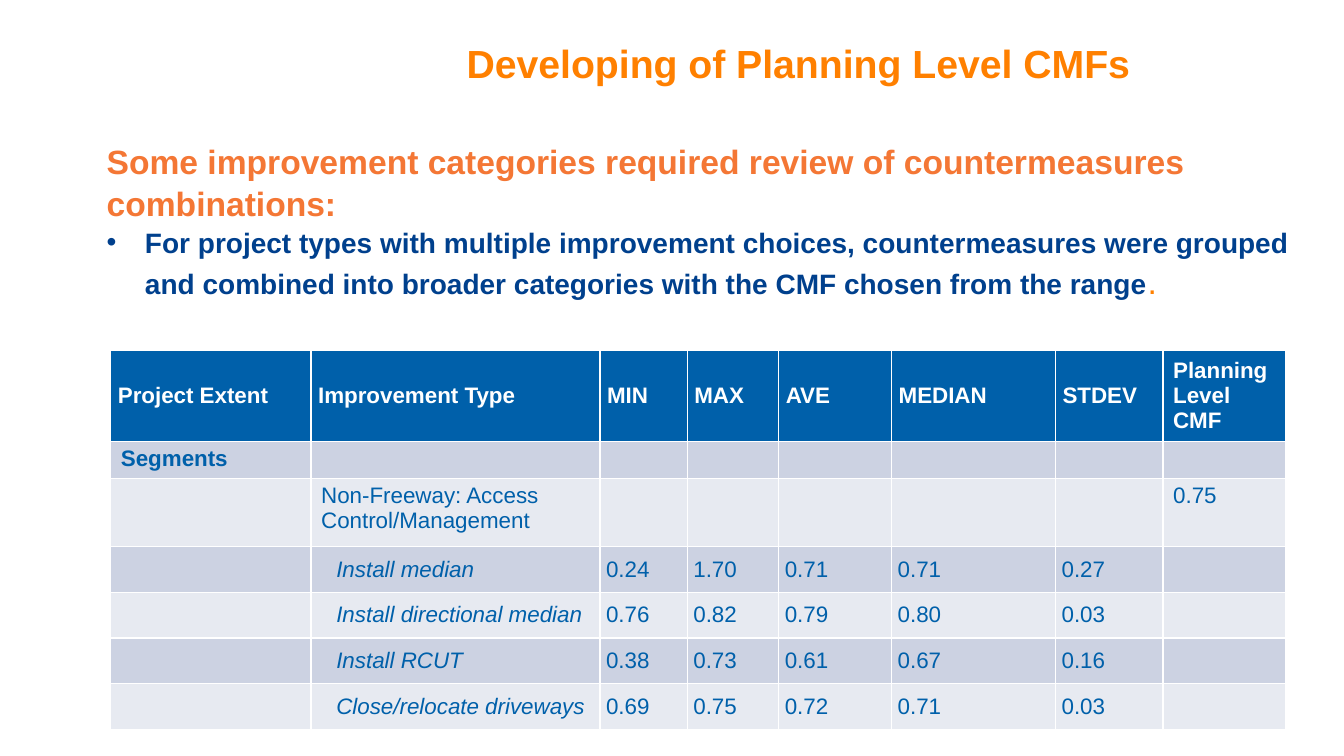
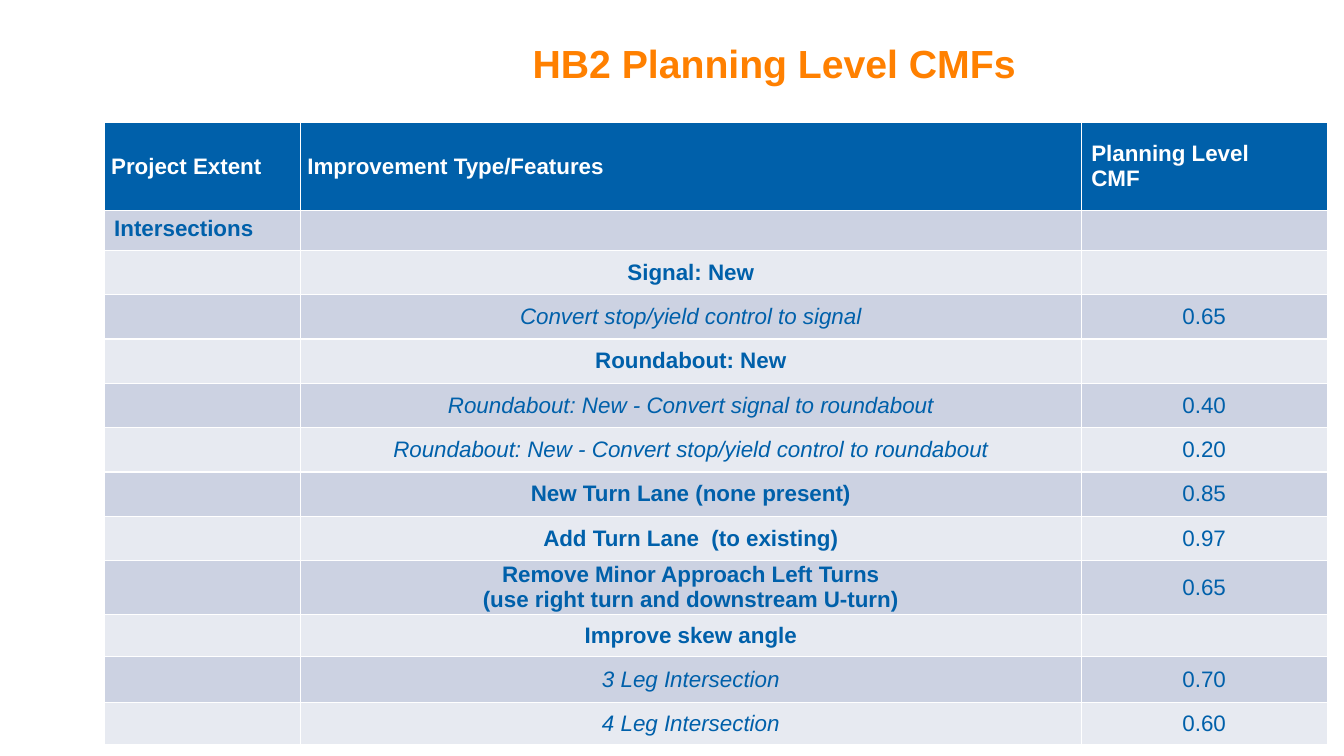
from lxml.etree import SubElement
from pptx import Presentation
from pptx.dml.color import RGBColor
from pptx.enum.text import MSO_ANCHOR, PP_ALIGN
from pptx.oxml.ns import qn
from pptx.util import Inches, Pt

WHITE = RGBColor(0xFF, 0xFF, 0xFF)
ORANGE = RGBColor(0xFF, 0x80, 0x00)
CORAL = RGBColor(0xF4, 0x77, 0x35)
NAVY = RGBColor(0x00, 0x40, 0x8D)
BLUE = RGBColor(0x00, 0x60, 0xAA)
DARK = RGBColor(0xCC, 0xD2, 0xE2)
LIGHT = RGBColor(0xE7, 0xEA, 0xF1)

deck = Presentation()
deck.slide_width, deck.slide_height = Inches(13.33), Inches(7.5)
# One percent of the slide's width and height
COL, ROW = deck.slide_width // 100, deck.slide_height // 100

# Cell styles: "pad" keeps the default margins, "left" is an indent in inches
HEAD = dict(bold=True, color=WHITE, left=0.07)
LAST = dict(bold=True, color=WHITE, pad=True)
AREA = dict(bold=True, pad=True, anchor=MSO_ANCHOR.TOP)
TYPE = dict(pad=True, anchor=MSO_ANCHOR.TOP)
ITEM = dict(italic=True, left=0.25)
NUM = dict(left=0.06)
GROUP = dict(bold=True, align=PP_ALIGN.CENTER)
CASE = dict(italic=True, align=PP_ALIGN.CENTER)
RATE = dict(align=PP_ALIGN.CENTER)


def put(para, text, size=16, color=BLUE, bold=False, italic=False, align=None):
    """Add a formatted run to a paragraph."""
    if align is not None:
        para.alignment = align
    run = para.add_run()
    run.text = text
    font = run.font
    font.name, font.size, font.color.rgb = "Arial", Pt(size), color
    font.bold, font.italic = bold, italic


def grid(slide, left, top, cols, rows):
    """Draw a table; each row is (height, {column: (text, style)})."""
    high = sum(row[0] for row in rows)
    table = slide.shapes.add_table(
        len(rows), len(cols), int(left * COL), int(top * ROW),
        int(sum(cols) * COL), int(high * ROW)).table
    for col, wide in zip(table.columns, cols):
        col.width = int(wide * COL)
    for r, (tall, texts) in enumerate(rows):
        table.rows[r].height = int(tall * ROW)
        for c, cell in enumerate(table.rows[r].cells):
            cell.fill.solid()
            cell.fill.fore_color.rgb = BLUE if r == 0 else (LIGHT, DARK)[r % 2]
            text, style = texts.get(c, ("", {}))
            look = dict(style)
            cell.vertical_anchor = look.pop("anchor", MSO_ANCHOR.MIDDLE)
            indent = look.pop("left", 0)
            if not look.pop("pad", False):
                cell.margin_left = Inches(indent)
                cell.margin_right = cell.margin_top = cell.margin_bottom = 0
            frame = cell.text_frame
            for n, line in enumerate(text.split("\n") if text else []):
                para = frame.add_paragraph() if n else frame.paragraphs[0]
                put(para, line, **look)


slides = []
for name, left in (("Developing of Planning Level CMFs", 22.7),
                   ("HB2 Planning Level CMFs", 20.9)):
    slide = deck.slides.add_slide(deck.slide_layouts[6])
    frame = slide.shapes.add_textbox(
        int(left * COL), 0, int(73.4 * COL), int(16.7 * ROW)).text_frame
    frame.word_wrap = True
    frame.vertical_anchor = MSO_ANCHOR.MIDDLE
    put(frame.paragraphs[0], name, size=28, color=ORANGE, bold=True,
        align=PP_ALIGN.CENTER)
    slides.append(slide)
ranges, levels = slides

# Slide 1: introduction
frame = ranges.shapes.add_textbox(
    int(7.2 * COL), int(17.7 * ROW), int(90.2 * COL), 25 * ROW).text_frame
frame.word_wrap = True
intro, point = frame.paragraphs[0], frame.add_paragraph()
intro.line_spacing = point.line_spacing = 1.05
put(intro, "Some improvement categories required review of countermeasures "
    "combinations:", size=24, color=CORAL, bold=True)
props = point._p.get_or_add_pPr()
props.set("marL", str(Inches(0.38)))
props.set("indent", str(-Inches(0.38)))
SubElement(props, qn("a:buFont")).set("typeface", "Arial")
SubElement(props, qn("a:buChar")).set("char", "•")
put(point, "For project types with multiple improvement choices, "
    "countermeasures were grouped and combined into broader categories with "
    "the CMF chosen from the range", size=20, color=NAVY, bold=True)
put(point, ".", size=24, color=ORANGE)

# Slide 1: ranges of the combined countermeasures
heads = ["Project Extent", "Improvement Type", "MIN", "MAX", "AVE", "MEDIAN",
         "STDEV"]
top = {c: (text, HEAD) for c, text in enumerate(heads)}
top[7] = ("Planning Level\nCMF", LAST)
rows = [
    (11.2, top),
    (4.7, {0: ("Segments", AREA)}),
    (9, {1: ("Non-Freeway: Access Control/Management", TYPE),
         7: ("0.75", TYPE)}),
]
for item, *nums in (
        ("Install median", "0.24", "1.70", "0.71", "0.71", "0.27"),
        ("Install directional median", "0.76", "0.82", "0.79", "0.80", "0.03"),
        ("Install RCUT", "0.38", "0.73", "0.61", "0.67", "0.16"),
        ("Close/relocate driveways", "0.69", "0.75", "0.72", "0.71", "0.03")):
    texts = {c: (num, NUM) for c, num in enumerate(nums, 2)}
    rows.append((6.05, {1: (item, ITEM), **texts}))
grid(ranges, 8.25, 46.4, [14.9, 21.5, 6.5, 6.8, 8.4, 12.2, 8, 9.1], rows)

# Slide 2: chosen levels
rows = [
    (11.7, {0: ("Project Extent", HEAD), 1: ("Improvement Type/Features", HEAD),
            2: ("Planning Level\nCMF", LAST)}),
    (5.2, {0: ("Intersections", AREA)}),
]
for tall, style, name, rate in (
        (5.87, GROUP, "Signal: New", ""),
        (5.87, CASE, "Convert stop/yield control to signal", "0.65"),
        (5.87, GROUP, "Roundabout: New", ""),
        (5.87, CASE, "Roundabout: New - Convert signal to roundabout", "0.40"),
        (5.87, CASE, "Roundabout: New - Convert stop/yield control to "
         "roundabout", "0.20"),
        (5.87, GROUP, "New Turn Lane (none present)", "0.85"),
        (5.87, GROUP, "Add Turn Lane  (to existing)", "0.97"),
        (6.6, GROUP, "Remove Minor Approach Left Turns\n"
         "(use right turn and downstream U-turn)", "0.65"),
        (5.6, GROUP, "Improve skew angle", ""),
        (6, CASE, "3 Leg Intersection", "0.70"),
        (5.6, CASE, "4 Leg Intersection", "0.60")):
    rows.append((tall, {1: (name, style), 2: (rate, RATE)}))
grid(levels, 7.75, 16.2, [14.6, 58.1, 18.3], rows)

deck.save("out.pptx")
